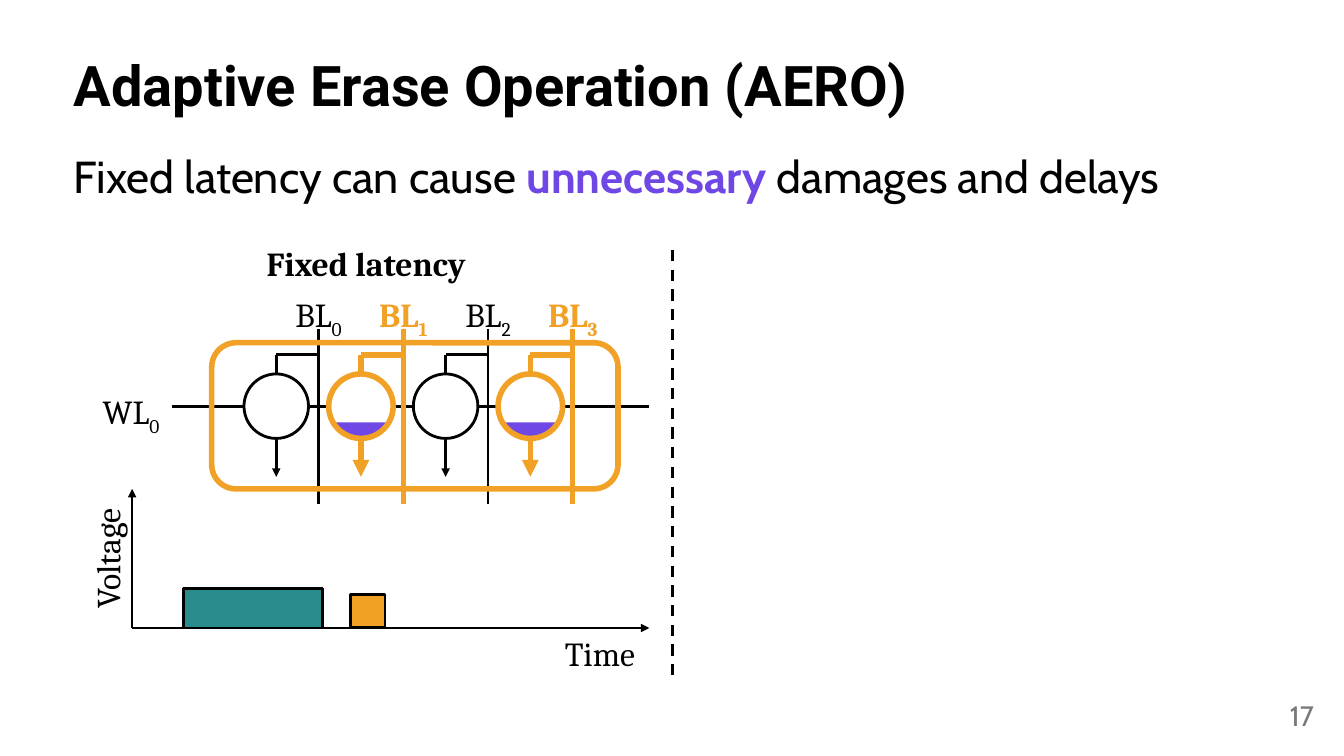
from math import cos, pi, sin

from lxml.etree import SubElement
from pptx import Presentation
from pptx.dml.color import RGBColor
from pptx.enum.dml import MSO_LINE
from pptx.enum.shapes import MSO_CONNECTOR, MSO_SHAPE
from pptx.enum.text import MSO_ANCHOR, PP_ALIGN
from pptx.oxml.ns import qn
from pptx.util import Inches, Pt

COLORS = {"black": "000000", "white": "FFFFFF", "gray": "797979",
          "orange": "F1A226", "purple": "6F47E5", "teal": "298C8C"}

TITLE = "Adaptive Erase Operation (AERO)"
MESSAGE = [("Fixed latency can cause", "black", False),
           (" unnecessary ", "purple", True),
           ("damages and delays", "black", False)]
PAGE_NUMBER = "17"
LABELS = [("Fixed latency", (2.51, 2.36, 2.24, 0.5), True, 0),
          ("Time", (5.48, 6.23, 0.94, 0.5), False, 0),
          ("Voltage", (0.43, 5.29, 1.26, 0.5), False, 270)]
PULSES = [("teal", 1.82, 1.38, 0.39), ("orange", 3.48, 0.34, 0.33)]
CELLS = [("0", False), ("1", True), ("2", False), ("3", True)]

AXIS_ORIGIN = (1.31, 6.23)
FIRST_CELL, CELL_PITCH, RADIUS = 2.74, 0.84, 0.32
WORD_LINE_Y, BRANCH_Y, ARROW_Y = 4.03, 3.52, 4.73
BIT_LINE_OFFSET, BIT_LINE_TOP, BIT_LINE_BOTTOM = 0.42, 3.26, 5


def rgb(name):
    return RGBColor.from_string(COLORS[name])


def add_text(slide, box, runs, size, font, align=PP_ALIGN.CENTER,
             anchor=MSO_ANCHOR.MIDDLE, wrap=False, spacing=1.0):
    shape = slide.shapes.add_textbox(*map(Inches, box))
    frame = shape.text_frame
    frame.word_wrap = wrap
    frame.vertical_anchor = anchor
    paragraph = frame.paragraphs[0]
    paragraph.alignment = align
    paragraph.line_spacing = spacing
    paragraph.font.size = Pt(size)
    paragraph.font.name = font
    for text, color, bold in runs:
        run = paragraph.add_run()
        run.text = text
        run.font.size = Pt(size)
        run.font.name = font
        run.font.bold = bold
        run.font.color.rgb = rgb(color)
    return shape


def add_indexed_label(slide, box, name, index, color, bold, align):
    shape = add_text(slide, box, [(name, color, bold), (index, color, bold)],
                     24, "Cambria", align, MSO_ANCHOR.TOP)
    subscript = shape.text_frame.paragraphs[0].runs[1]
    subscript.font._element.set("baseline", "-25000")


def add_line(slide, start, end, color="black", width=2, arrow=False):
    line = slide.shapes.add_connector(
        MSO_CONNECTOR.STRAIGHT, *map(Inches, (*start, *end)))
    line.line.color.rgb = rgb(color)
    line.line.width = Pt(width)
    if arrow:
        SubElement(line.line._get_or_add_ln(), qn("a:tailEnd"), type="triangle")
    SubElement(line._element.spPr, qn("a:effectLst"))
    return line


def style(shape, fill=None, line=None, width=2):
    shape.shadow.inherit = False
    if fill:
        shape.fill.solid()
        shape.fill.fore_color.rgb = rgb(fill)
    else:
        shape.fill.background()
    if line:
        shape.line.color.rgb = rgb(line)
        shape.line.width = Pt(width)
    else:
        shape.line.fill.background()


def add_shape(slide, kind, box, fill, line, width=2):
    shape = slide.shapes.add_shape(kind, *map(Inches, box))
    style(shape, fill, line, width)


def add_residual_charge(slide, center):
    angles = [pi / 6 + step * pi / 36 for step in range(25)]
    points = [(Inches(center + RADIUS * cos(angle)),
               Inches(WORD_LINE_Y + RADIUS * sin(angle))) for angle in angles]
    builder = slide.shapes.build_freeform(*points[0])
    builder.add_line_segments(points[1:], close=True)
    style(builder.convert_to_shape(), "purple")


def add_cell(slide, position, index, slow):
    color, width = ("orange", 4) if slow else ("black", 2)
    center = FIRST_CELL + position * CELL_PITCH
    bit_line = center + BIT_LINE_OFFSET
    circle = (center - RADIUS, WORD_LINE_Y - RADIUS, 2 * RADIUS, 2 * RADIUS)
    add_line(slide, (center, BRANCH_Y), (center, ARROW_Y), color, width, True)
    add_shape(slide, MSO_SHAPE.OVAL, circle, "white", None)
    if slow:
        add_residual_charge(slide, center)
    add_shape(slide, MSO_SHAPE.OVAL, circle, None, color, width)
    add_indexed_label(slide, (bit_line - 0.36, 2.87, 0.72, 0.5), "BL", index,
                      color, slow, PP_ALIGN.CENTER)
    add_line(slide, (bit_line, BIT_LINE_TOP), (bit_line, BIT_LINE_BOTTOM), color, width)
    add_line(slide, (center, BRANCH_Y), (bit_line, BRANCH_Y), color, width)


def main():
    """Build the slide on fixed erase latency and save it."""
    presentation = Presentation()
    presentation.slide_width = Inches(13.33)
    presentation.slide_height = Inches(7.5)
    slide = presentation.slides.add_slide(presentation.slide_layouts[6])

    add_text(slide, (0.63, 0.15, 12.08, 1.45), [(TITLE, "black", True)], 40,
             "Roboto", PP_ALIGN.LEFT, wrap=True, spacing=0.9)
    add_text(slide, (0.63, 1.49, 12.08, 5.46), MESSAGE, 32, "Cabin",
             PP_ALIGN.LEFT, MSO_ANCHOR.TOP, True, 0.9)
    add_text(slide, (10.13, 6.9, 3, 0.4), [(PAGE_NUMBER, "gray", False)], 20,
             "Cabin", PP_ALIGN.RIGHT, wrap=True)

    origin_x, origin_y = AXIS_ORIGIN
    add_line(slide, AXIS_ORIGIN, (origin_x, 4.85), arrow=True)
    for color, left, width, height in PULSES:
        add_shape(slide, MSO_SHAPE.RECTANGLE,
                  (left, origin_y - height, width, height), color, "black")
    add_line(slide, AXIS_ORIGIN, (6.44, origin_y), arrow=True)
    for text, box, bold, rotation in LABELS:
        label = add_text(slide, box, [(text, "black", bold)], 24, "Cambria")
        label.rotation = rotation

    divider = add_line(slide, (6.67, 2.48), (6.67, 6.73))
    divider.line.dash_style = MSO_LINE.DASH

    add_line(slide, (1.71, WORD_LINE_Y), (6.44, WORD_LINE_Y))
    add_indexed_label(slide, (0.86, 3.83, 0.82, 0.5), "WL", "0", "black", False,
                      PP_ALIGN.RIGHT)
    for position, (index, slow) in enumerate(CELLS):
        add_cell(slide, position, index, slow)
    add_shape(slide, MSO_SHAPE.ROUNDED_RECTANGLE, (2.1, 3.4, 4.03, 1.45),
              None, "orange", 4)

    presentation.save("out.pptx")


if __name__ == "__main__":
    main()
